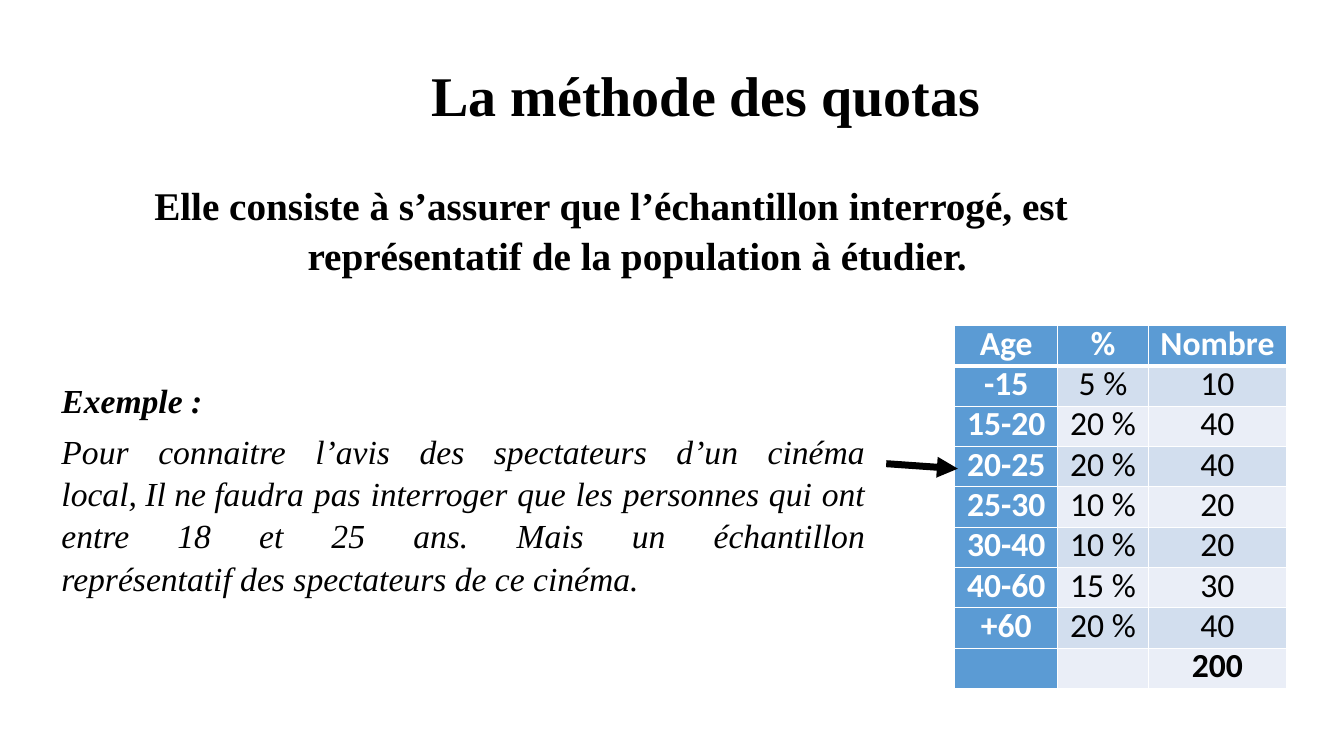
import pptx
import pptx.util
import pptx.dml.color
import pptx.enum.shapes
import pptx.enum.text
import pptx.oxml
import pptx.oxml.ns

Inches = pptx.util.Inches
Pt = pptx.util.Pt
ALIGN = pptx.enum.text.PP_ALIGN

SERIF = {"name": "Times New Roman"}
TITLE = {**SERIF, "size": Pt(40), "bold": True}
DEFINITION = {**SERIF, "size": Pt(28), "bold": True}
EXAMPLE = {**SERIF, "size": Pt(24), "italic": True}
CELL = {"name": "Calibri", "size": Pt(24)}
BLACK, WHITE, BLUE = "000000", "FFFFFF", "5B9BD4"
BANDS = ["D2DEEE", "EAEEF7"]

# Joins words that must stay on one line.
NO_BREAK = chr(160)

QUOTAS = [
    ["Age", "%", "Nombre"],
    ["-15", "5 %", "10"],
    ["15-20", "20 %", "40"],
    ["20-25", "20 %", "40"],
    ["25-30", "10 %", "20"],
    ["30-40", "10 %", "20"],
    ["40-60", "15 %", "30"],
    ["+60", "20 %", "40"],
    ["", "", "200"],
]


def rgb(value):
    return pptx.dml.color.RGBColor.from_string(value)


def apply(target, formats):
    for name, value in formats.items():
        setattr(target, name, value)


def add_span(para, text, formats, color=BLACK):
    span = para.add_run()
    span.text = text
    apply(span.font, formats)
    span.font.color.rgb = rgb(color)


def add_box(page, left, top, width, height):
    box = page.shapes.add_textbox(
        Inches(left), Inches(top), Inches(width), Inches(height))
    frame = box.text_frame
    apply(frame, {"word_wrap": True, "margin_left": 0, "margin_right": 0,
                  "margin_top": 0, "margin_bottom": 0})
    return frame


def set_indent(para, left, first=0):
    properties = para._p.get_or_add_pPr()
    properties.set("marL", str(Inches(left)))
    properties.set("indent", str(Inches(first)))


def add_title(page, left, top, width, height):
    frame = add_box(page, left, top, width, height)
    frame.margin_top = Inches(0.3)
    para = frame.paragraphs[0]
    set_indent(para, 2.66)
    add_span(para, "La méthode des quotas", TITLE)


def add_definition(page, left, top, width, height):
    para = add_box(page, left, top, width, height).paragraphs[0]
    para.line_spacing = 1.05
    set_indent(para, 2.45, -1.52)
    add_span(para, "Elle consiste à s’assurer que l’échantillon interrogé, est "
             "représentatif de la population à étudier.", DEFINITION)


def add_example(page, left, top, width, height):
    frame = add_box(page, left, top, width, height)
    heading, story = frame.paragraphs[0], frame.add_paragraph()
    for para in (heading, story):
        apply(para, {"alignment": ALIGN.JUSTIFY, "line_spacing": 1.05})
    story.space_before = Pt(6)
    add_span(heading, "Exemple :", {**EXAMPLE, "bold": True})
    second_line = NO_BREAK.join(["local,", "Il", "ne", "faudra"])
    last_line = NO_BREAK.join(["représentatif", "des", "spectateurs"])
    add_span(story, "Pour connaitre l’avis des spectateurs d’un cinéma "
             f"{second_line} pas interroger que les personnes qui "
             "ont entre 18 et 25 ans. Mais un échantillon "
             f"{last_line} de ce cinéma.", EXAMPLE)


def set_borders(cell, widths):
    """Draw white cell borders; widths maps each side to points."""
    properties = cell._tc.get_or_add_tcPr()
    for position, (side, width) in enumerate(widths.items()):
        properties.insert(position, pptx.oxml.parse_xml(
            f'<a:{side} {pptx.oxml.ns.nsdecls("a")} w="{Pt(width)}">'
            f'<a:solidFill><a:srgbClr val="{WHITE}"/></a:solidFill></a:{side}>'))


def add_quota_table(page, left, top, widths, row_height):
    table = page.shapes.add_table(
        len(QUOTAS), len(widths), Inches(left), Inches(top),
        Inches(sum(widths)), Inches(row_height * len(QUOTAS))).table
    for column, width in zip(table.columns, widths):
        column.width = Inches(width)
    for r, values in enumerate(QUOTAS):
        table.rows[r].height = Inches(row_height)
        for c, value in enumerate(values):
            cell = table.cell(r, c)
            heading = r == 0 or c == 0
            total = r == len(QUOTAS) - 1
            apply(cell, {"margin_left": 0, "margin_right": 0,
                         "margin_top": 0, "margin_bottom": 0})
            cell.fill.solid()
            cell.fill.fore_color.rgb = rgb(BLUE if heading else BANDS[(r + 1) % 2])
            set_borders(cell, {"lnL": 1, "lnR": 1, "lnT": 3 if r == 1 else 1,
                               "lnB": 3 if r == 0 else 1})
            para = cell.text_frame.paragraphs[0]
            apply(para, {"alignment": ALIGN.CENTER, "line_spacing": Pt(27.6)})
            if value:
                add_span(para, value, {**CELL, "bold": heading or total},
                         WHITE if heading else BLACK)


def add_arrow(page, left, top, width, height):
    arrow = page.shapes.add_connector(
        pptx.enum.shapes.MSO_CONNECTOR.STRAIGHT, Inches(left), Inches(top),
        Inches(left + width), Inches(top + height))
    arrow.line.color.rgb = rgb(BLACK)
    arrow.line.width = Pt(5)
    namespace = pptx.oxml.ns.nsdecls("a")
    arrow.line._get_or_add_ln().append(
        pptx.oxml.parse_xml(f'<a:tailEnd {namespace} type="triangle"/>'))
    arrow._element.spPr.append(pptx.oxml.parse_xml(f"<a:effectLst {namespace}/>"))


def main():
    deck = pptx.Presentation()
    apply(deck, {"slide_width": Inches(13.33), "slide_height": Inches(7.5)})
    page = deck.slides.add_slide(deck.slide_layouts[6])
    add_title(page, 1.62, 0.3, 10.63, 0.97)
    add_definition(page, 0.6, 1.78, 11.25, 1)
    add_example(page, 0.61, 3.75, 7.97, 2.1)
    add_quota_table(page, 9.47, 3.23, [1.02, 0.9, 1.37], 0.4)
    add_arrow(page, 8.79, 4.6, 0.71, 0.05)
    deck.save("out.pptx")


if __name__ == "__main__":
    main()
